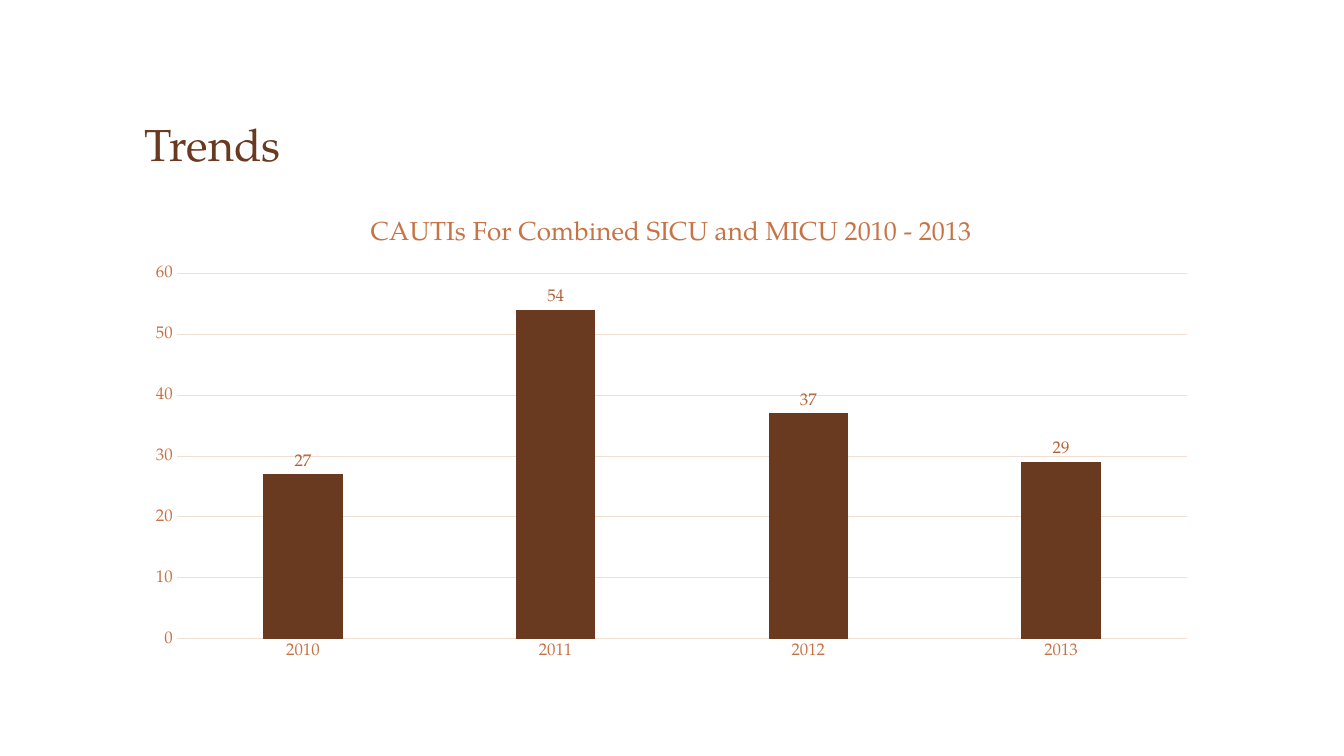
from pptx import Presentation
from pptx.chart.data import CategoryChartData
from pptx.dml.color import RGBColor
from pptx.enum.chart import XL_CHART_TYPE as ChartType
from pptx.enum.chart import XL_LABEL_POSITION as LabelPosition
from pptx.enum.chart import XL_TICK_MARK as TickMark
from pptx.enum.text import MSO_ANCHOR as Anchor
from pptx.enum.text import PP_ALIGN as Align
from pptx.util import Pt

BROWN, COPPER, RUST, PALE = "6A3A20", "C77345", "B16136", "F2DFD4"


def style_font(font, size, color):
    font.name = "TeX Gyre Pagella"
    font.size = Pt(size)
    font.bold = False
    font.color.rgb = RGBColor.from_string(color)


def style_line(line, color):
    line.width = Pt(0.75)
    line.color.rgb = RGBColor.from_string(color)


deck = Presentation()
deck.slide_width, deck.slide_height = Pt(960), Pt(540)
slide = deck.slides.add_slide(deck.slide_layouts[5])

# Heading
heading = slide.shapes.title
heading.left, heading.top, heading.width, heading.height = Pt(96), Pt(34), Pt(767.5), Pt(92)
heading.text_frame.text = "Trends"
heading.text_frame.vertical_anchor = Anchor.BOTTOM
heading_line = heading.text_frame.paragraphs[0]
heading_line.alignment = Align.LEFT
heading_line.line_spacing = 0.9
style_font(heading_line.runs[0].font, 32, BROWN)

# Infections per year
infections = CategoryChartData()
infections.categories = ["2010", "2011", "2012", "2013"]
infections.add_series("Series 1", [27, 54, 37, 29])
chart = slide.shapes.add_chart(
    ChartType.COLUMN_CLUSTERED, Pt(96), Pt(142), Pt(767.5), Pt(336), infections
).chart
style_font(chart.font, 10, BROWN)
chart.has_legend = False

chart.has_title = True
chart.chart_title.include_in_layout = False
caption = chart.chart_title.text_frame
caption.text = "CAUTIs For Combined SICU and MICU 2010 - 2013"
style_font(caption.paragraphs[0].runs[0].font, 18.6, COPPER)

# Axes
years, counts = chart.category_axis, chart.value_axis
for axis in (years, counts):
    axis.major_tick_mark = axis.minor_tick_mark = TickMark.NONE
    style_font(axis.tick_labels.font, 12, COPPER)
style_line(years.format.line, PALE)
counts.format.line.fill.background()
counts.minimum_scale, counts.maximum_scale, counts.major_unit = 0, 60, 10
counts.has_major_gridlines = True
style_line(counts.major_gridlines.format.line, PALE)

# Columns and their values
columns = chart.plots[0]
columns.gap_width, columns.overlap = 219, -27
columns.vary_by_categories = False
series = columns.series[0]
series.format.fill.solid()
series.format.fill.fore_color.rgb = RGBColor.from_string(BROWN)
labels = series.data_labels
labels.show_value = True
labels.position = LabelPosition.OUTSIDE_END
style_font(labels.font, 12, RUST)

deck.save("out.pptx")
